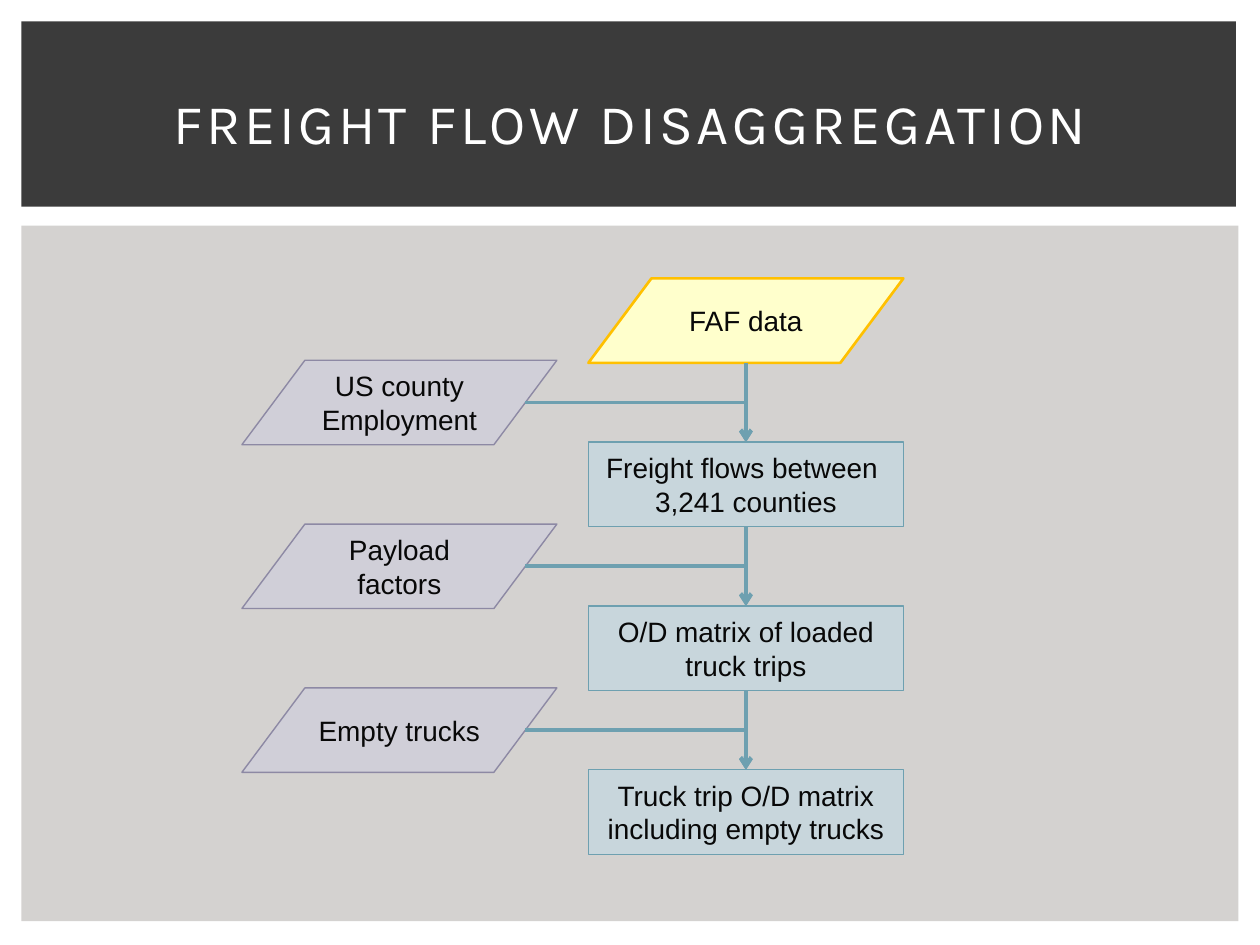
import pptx
import pptx.util
import pptx.dml.color
import pptx.enum.shapes
import pptx.enum.text
import pptx.oxml.ns
import lxml.etree

Inches, Pt = pptx.util.Inches, pptx.util.Pt
RGB = pptx.dml.color.RGBColor.from_string
SHAPE = pptx.enum.shapes.MSO_SHAPE
CONNECTOR = pptx.enum.shapes.MSO_CONNECTOR
MIDDLE = pptx.enum.text.MSO_ANCHOR.MIDDLE
CENTER = pptx.enum.text.PP_ALIGN.CENTER
qn = pptx.oxml.ns.qn

COLORS = {
    "panel": "D4D2D0", "band": "3B3B3B", "title": "FFFFFF", "text": "080808",
    "process": "C8D6DC", "flow": "6EA0B0",
    "source": "FFFFCC", "source_line": "FFC000",
    "input": "D0CFD8", "input_line": "8D89A4",
}

# Flowchart grid: two columns, with inputs half a row below the main steps
BOX_W, BOX_H = 2.5, 0.67
INPUT_X, MAIN_X = 1.92, 4.67
TOP, HALF_ROW = 2.21, 0.65
MID_X = MAIN_X + BOX_W / 2
INPUT_EDGE = INPUT_X + 0.9 * BOX_W


def add_box(kind, x, y, w, h, fill, line=None, width=0.79, text=None):
    sp = s.shapes.add_shape(kind, Inches(x), Inches(y), Inches(w), Inches(h))
    sp.shadow.inherit = False
    sp.fill.solid()
    sp.fill.fore_color.rgb = RGB(COLORS[fill])
    if line:
        sp.line.color.rgb = RGB(COLORS[line])
        sp.line.width = Pt(width)
    else:
        sp.line.fill.background()
    if text:
        tf = sp.text_frame
        tf.word_wrap = True
        tf.vertical_anchor = MIDDLE
        p = tf.paragraphs[0]
        p.text = text
        p.alignment = CENTER
        p.font.name, p.font.size = "Arial", Pt(16)
        p.font.color.rgb = RGB(COLORS["text"])
    return sp


def add_arrow(kind, x1, y1, x2, y2):
    c = s.shapes.add_connector(kind, Inches(x1), Inches(y1), Inches(x2), Inches(y2))
    c.line.color.rgb = RGB(COLORS["flow"])
    c.line.width = Pt(2.25)
    lxml.etree.SubElement(c.line._get_or_add_ln(), qn("a:tailEnd"), type="arrow")
    lxml.etree.SubElement(c.element.spPr, qn("a:effectLst"))
    return c


prs = pptx.Presentation()
prs.slide_width, prs.slide_height = Inches(10), Inches(7.5)
s = prs.slides.add_slide(prs.slide_layouts[5])

# Background panel and title band
add_box(SHAPE.RECTANGLE, 0.17, 1.79, 9.66, 5.52, "panel")
add_box(SHAPE.RECTANGLE, 0.17, 0.17, 9.64, 1.47, "band")

# Title, brought in front of the band
title = s.shapes.title
s.shapes.element.append(title.element)
title.left, title.top = Inches(0.42), Inches(0.39)
title.width, title.height = Inches(9.17), Inches(1.15)
title.text_frame.vertical_anchor = MIDDLE
p = title.text_frame.paragraphs[0]
p.alignment = CENTER
r = p.add_run()
r.text = "FREIGHT FLOW DISAGGREGATION"
r.font.name, r.font.size = "Karla", Pt(32)
r.font.color.rgb = RGB(COLORS["title"])
r.font._element.set("spc", "200")

# Source data at the head of the main column
previous = add_box(SHAPE.FLOWCHART_DATA, MAIN_X, TOP, BOX_W, BOX_H,
                   "source", "source_line", 1.5, "FAF data")

# Each stage: an input on the left feeds the step below
stages = [
    ("US county Employment", "Freight flows between \v3,241 counties"),
    ("Payload factors", "O/D matrix of loaded truck trips"),
    ("Empty trucks", "Truck trip O/D matrix including empty trucks"),
]
for i, (input_text, step_text) in enumerate(stages):
    input_y = TOP + (2 * i + 1) * HALF_ROW
    step_y = input_y + HALF_ROW
    add_box(SHAPE.FLOWCHART_DATA, INPUT_X, input_y, BOX_W, BOX_H,
            "input", "input_line", text=input_text)
    step = add_box(SHAPE.FLOWCHART_PROCESS, MAIN_X, step_y, BOX_W, BOX_H,
                   "process", "flow", text=step_text)

    # Main flow downwards
    c = add_arrow(CONNECTOR.STRAIGHT, MID_X, step_y - 2 * HALF_ROW + BOX_H, MID_X, step_y)
    if i > 0:
        c.begin_connect(previous, 2)
    c.end_connect(step, 0)

    # Input joins the main flow with a single bend
    c = add_arrow(CONNECTOR.ELBOW, INPUT_EDGE, input_y + BOX_H / 2, MID_X, step_y)
    c.element.spPr.find(qn("a:prstGeom")).set("prst", "bentConnector2")
    previous = step

prs.save("out.pptx")
